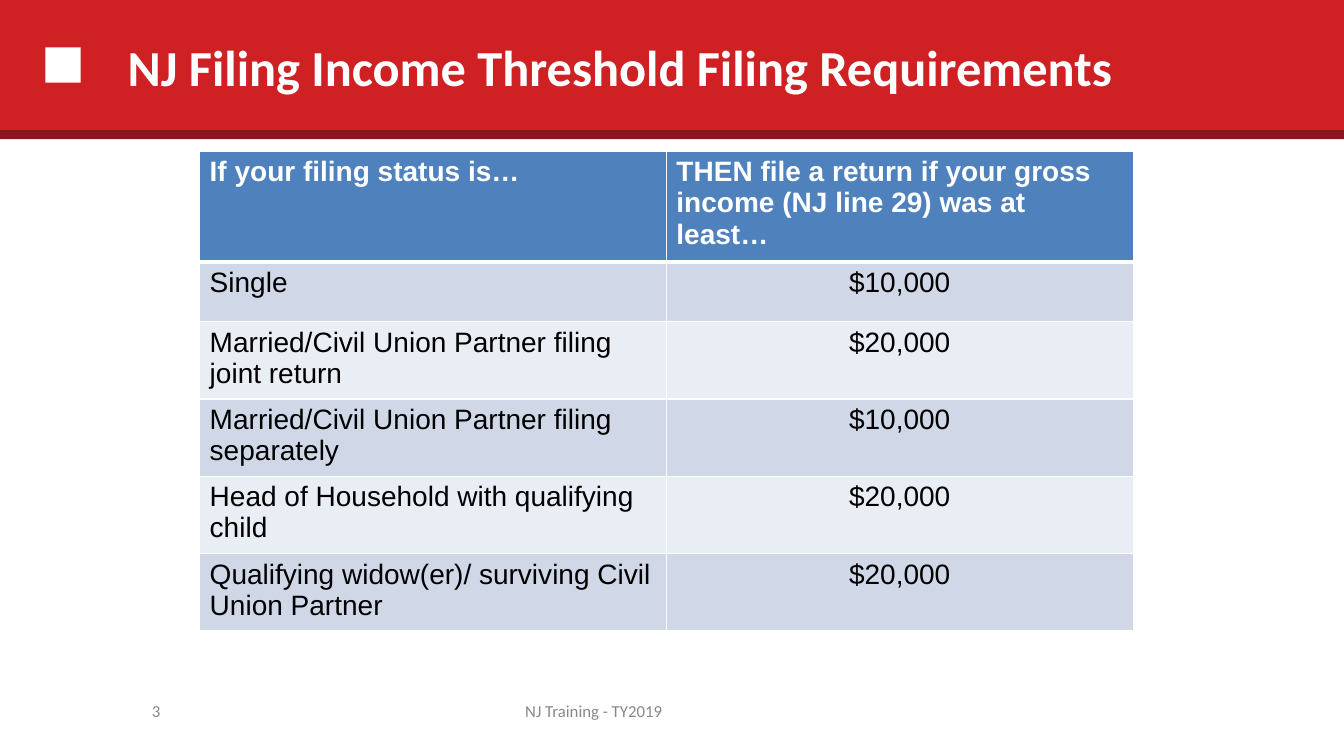
from dataclasses import dataclass

import pptx
import pptx.dml.color
import pptx.enum.shapes
import pptx.enum.text
import pptx.oxml.ns
import pptx.util
from lxml import etree

Pt = pptx.util.Pt
ALIGN = pptx.enum.text.PP_ALIGN
ANCHOR = pptx.enum.text.MSO_ANCHOR


@dataclass
class Bar:
    left: float
    top: float
    width: float
    height: float
    fill: str


@dataclass
class Label:
    left: float
    top: float
    width: float
    height: float
    text: str
    size: float
    color: str
    bold: bool = False
    align: ALIGN = ALIGN.LEFT


@dataclass
class Threshold:
    status: str
    income: str
    height: float


BANNER = [
    Bar(0, -0.7, 960, 95.7, "CF2124"),
    Bar(32.4, 33.8, 25.2, 25.2, "FFFFFF"),
    Bar(0, 92.9, 960, 6.5, "841721"),
]
LABELS = [
    Label(273.6, 493.2, 303.8, 28.8, "NJ Training - TY2019 ", 12, "888888", align=ALIGN.CENTER),
    Label(48.2, 493.2, 73.4, 28.8, "3", 12, "888888", align=ALIGN.RIGHT),
    Label(84.2, 2.2, 767.5, 90, "NJ Filing Income Threshold Filing Requirements", 36, "FFFFFF", True),
]
THRESHOLDS = [
    Threshold("If your filing status is…",
              "THEN file a return if your gross income (NJ line 29) was at least…", 69.8),
    Threshold("Single", "$10,000", 42.5),
    Threshold("Married/Civil Union Partner filing joint return", "$20,000", 42.5),
    Threshold("Married/Civil Union Partner filing separately", "$10,000", 49.7),
    Threshold("Head of Household with qualifying child", "$20,000", 46.8),
    Threshold("Qualifying widow(er)/ surviving Civil Union Partner", "$20,000", 31),
]
HEADER_FILL = "4F81BD"
BAND_FILLS = ("E9EDF4", "D0D8E8")
COLUMN_WIDTH = 333.4


def rgb(color: str) -> pptx.dml.color.RGBColor:
    return pptx.dml.color.RGBColor.from_string(color)


def add_run(paragraph, text: str, font: str, size: float, color: str, bold: bool) -> None:
    run = paragraph.add_run()
    run.text = text
    run.font.name = font
    run.font.size = Pt(size)
    run.font.bold = bold
    run.font.color.rgb = rgb(color)


def draw_bar(slide, bar: Bar) -> None:
    block = slide.shapes.add_shape(
        pptx.enum.shapes.MSO_SHAPE.RECTANGLE,
        Pt(bar.left), Pt(bar.top), Pt(bar.width), Pt(bar.height))
    block.shadow.inherit = False
    block.fill.solid()
    block.fill.fore_color.rgb = rgb(bar.fill)
    block.line.fill.background()


def draw_label(slide, label: Label) -> None:
    frame = slide.shapes.add_textbox(
        Pt(label.left), Pt(label.top), Pt(label.width), Pt(label.height)).text_frame
    frame.word_wrap = True
    frame.vertical_anchor = ANCHOR.MIDDLE
    paragraph = frame.paragraphs[0]
    paragraph.alignment = label.align
    add_run(paragraph, label.text, "Calibri", label.size, label.color, label.bold)


def add_border(cell, side: str, width: float, color: str) -> None:
    qn = pptx.oxml.ns.qn
    properties = cell._tc.get_or_add_tcPr()
    line = etree.SubElement(properties, qn(f"a:ln{side}"), w=str(int(Pt(width))))
    fill = etree.SubElement(line, qn("a:solidFill"))
    etree.SubElement(fill, qn("a:srgbClr"), val=color)


def draw_thresholds(slide, thresholds: list[Threshold]) -> None:
    table = slide.shapes.add_table(
        len(thresholds), 2, Pt(142.6), Pt(108), Pt(2 * COLUMN_WIDTH),
        Pt(sum(threshold.height for threshold in thresholds))).table
    for column in table.columns:
        column.width = Pt(COLUMN_WIDTH)
    for row, threshold in enumerate(thresholds):
        header = row == 0
        table.rows[row].height = Pt(threshold.height)
        for column, text in enumerate((threshold.status, threshold.income)):
            cell = table.cell(row, column)
            # Borders come before the fill in the cell properties
            widths = {"L": 1, "R": 1, "T": 3 if row == 1 else 1, "B": 3 if header else 1}
            for side, width in widths.items():
                add_border(cell, side, width, "FFFFFF")
            cell.fill.solid()
            cell.fill.fore_color.rgb = rgb(HEADER_FILL if header else BAND_FILLS[row % 2])
            paragraph = cell.text_frame.paragraphs[0]
            paragraph.alignment = ALIGN.CENTER if column and not header else ALIGN.LEFT
            add_run(paragraph, text, "Arial", 20, "FFFFFF" if header else "000000", header)


def main() -> None:
    deck = pptx.Presentation()
    deck.slide_width, deck.slide_height = Pt(960), Pt(540)
    slide = deck.slides.add_slide(deck.slide_layouts[6])

    # Banner
    for bar in BANNER:
        draw_bar(slide, bar)

    # Title and footer
    for label in LABELS:
        draw_label(slide, label)

    # Income thresholds
    draw_thresholds(slide, THRESHOLDS)

    deck.save("out.pptx")


if __name__ == "__main__":
    main()
